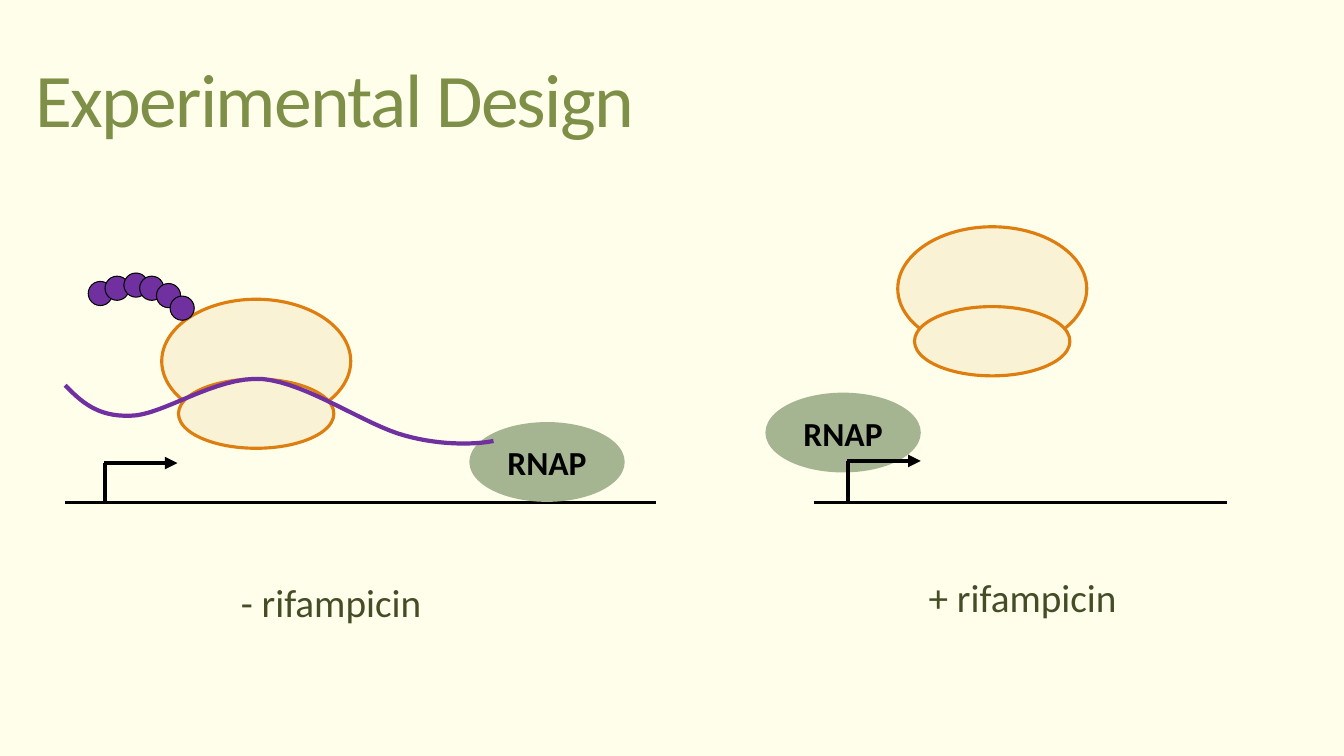
from lxml import etree
from pptx import Presentation
from pptx.dml.color import RGBColor
from pptx.enum.shapes import MSO_CONNECTOR, MSO_SHAPE
from pptx.enum.text import MSO_ANCHOR, MSO_AUTO_SIZE, PP_ALIGN
from pptx.oxml.ns import qn
from pptx.util import Emu, Pt

CREAM = RGBColor(0xFF, 0xFE, 0xEB)
OLIVE = RGBColor(0x7E, 0x8F, 0x47)
DARK_OLIVE = RGBColor(0x44, 0x4D, 0x26)
SAGE = RGBColor(0xA5, 0xB5, 0x92)
SAND = RGBColor(0xFA, 0xF2, 0xD4)
ORANGE = RGBColor(0xDD, 0x7E, 0x0E)
PURPLE = RGBColor(0x70, 0x30, 0xA0)
BLACK = RGBColor(0, 0, 0)
FONT = "Calibri"
CURVE_STEPS = 16

# Places within each panel
PEPTIDE = [(22, 8), (38, 3), (56, 0), (71, 3), (87, 10), (100, 22)]
MRNA_START = (0, 107)
MRNA_CURVES = [
    [(15, 122), (30, 137), (62, 136)],
    [(93, 136), (143, 98), (188, 101)],
    [(231, 105), (286, 145), (324, 155)],
    [(360, 165), (394, 163), (408, 160)],
]


def px(length):
    return Emu(round(length * 9525))


def style_text(paragraph, size, color, bold=False):
    font = paragraph.font
    font.name, font.size, font.bold = FONT, Pt(size), bold
    font.color.rgb = color


def add_ellipse(shapes, x, y, width, height, fill, outline=None, weight=0):
    ellipse = shapes.add_shape(MSO_SHAPE.OVAL, px(x), px(y), px(width), px(height))
    ellipse.shadow.inherit = False
    ellipse.fill.solid()
    ellipse.fill.fore_color.rgb = fill
    if outline is None:
        ellipse.line.fill.background()
    else:
        ellipse.line.color.rgb = outline
        ellipse.line.width = Pt(weight)
    return ellipse


def add_line(shapes, x1, y1, x2, y2, weight, arrow=False):
    line = shapes.add_connector(MSO_CONNECTOR.STRAIGHT, px(x1), px(y1), px(x2), px(y2))
    line.line.color.rgb = BLACK
    line.line.width = Pt(weight)
    if arrow:
        etree.SubElement(line.line._get_or_add_ln(), qn("a:tailEnd"), type="triangle")
    etree.SubElement(line._element.spPr, qn("a:effectLst"))


def add_ribosome(shapes, x, y):
    add_ellipse(shapes, x, y, 180, 118, SAND, ORANGE, 2.25)
    add_ellipse(shapes, x + 16, y + 76, 148, 66, SAND, ORANGE, 2.25)


def add_polymerase(shapes, x, y):
    polymerase = add_ellipse(shapes, x, y, 148, 76, SAGE)
    frame = polymerase.text_frame
    frame.word_wrap = False
    frame.vertical_anchor = MSO_ANCHOR.MIDDLE
    name = frame.paragraphs[0]
    name.text = "RNAP"
    name.alignment = PP_ALIGN.CENTER
    style_text(name, 24, BLACK, bold=True)


def add_promoter(shapes, x, y):
    add_line(shapes, x, y, x, y + 38, 3)
    add_line(shapes, x - 1, y, x + 69, y, 3, arrow=True)


def add_condition(shapes, x, y, wording):
    condition = shapes.add_textbox(px(x), px(y), px(370), px(55))
    frame = condition.text_frame
    frame.word_wrap = True
    frame.auto_size = MSO_AUTO_SIZE.SHAPE_TO_FIT_TEXT
    frame.text = wording
    style_text(frame.paragraphs[0], 28, DARK_OLIVE)


def curve_points(start, curves):
    """Follow joined cubic Bezier curves in short straight steps."""
    for curve in curves:
        controls = [start, *curve]
        for step in range(1, CURVE_STEPS + 1):
            t = step / CURVE_STEPS
            weights = ((1 - t) ** 3, 3 * t * (1 - t) ** 2, 3 * t * t * (1 - t), t ** 3)
            yield tuple(sum(w * point[axis] for w, point in zip(weights, controls))
                        for axis in (0, 1))
        start = curve[-1]


def add_mrna(shapes, x, y):
    start_x, start_y = MRNA_START
    outline = shapes.build_freeform(px(x + start_x), px(y + start_y))
    points = [(px(x + dx), px(y + dy)) for dx, dy in curve_points(MRNA_START, MRNA_CURVES)]
    outline.add_line_segments(points, close=False)
    mrna = outline.convert_to_shape()
    mrna.shadow.inherit = False
    mrna.fill.background()
    mrna.line.color.rgb = PURPLE
    mrna.line.width = Pt(3)


def add_title(slide, x, y, width, height):
    title = slide.shapes.title
    title.left, title.top, title.width, title.height = map(px, (x, y, width, height))
    frame = title.text_frame
    frame.text = "Experimental Design"
    frame.vertical_anchor = MSO_ANCHOR.MIDDLE
    heading = frame.paragraphs[0]
    heading.alignment = PP_ALIGN.LEFT
    heading.line_spacing = 0.85
    style_text(heading, 54, OLIVE)
    # Tighter letter spacing
    heading.runs[0]._r.get_or_add_rPr().set("spc", "-120")


def add_untreated_panel(slide, x, y):
    shapes = slide.shapes.add_group_shape().shapes
    add_ribosome(shapes, x + 92, y + 25)
    for dx, dy in PEPTIDE:
        add_ellipse(shapes, x + dx, y + dy, 23, 23, PURPLE, BLACK, 0.75)
    add_line(shapes, x, y + 219, x + 563, y + 219, 2.25)
    add_polymerase(shapes, x + 385, y + 142)
    add_mrna(shapes, x, y)
    add_promoter(shapes, x + 38, y + 181)
    add_condition(shapes, x + 158, y + 286, "- rifampicin")


def add_treated_panel(slide, x, y):
    shapes = slide.shapes.add_group_shape().shapes
    add_ribosome(shapes, x + 126, y)
    add_line(shapes, x + 46, y + 263, x + 440, y + 263, 2.25)
    # High enough for its label to clear the promoter arrow
    add_polymerase(shapes, x, y + 158)
    add_condition(shapes, x + 146, y + 325, "+ rifampicin")
    add_promoter(shapes, x + 79, y + 223)


def main():
    deck = Presentation()
    deck.slide_width, deck.slide_height = px(1280), px(720)
    slide = deck.slides.add_slide(deck.slide_layouts[5])
    slide.background.fill.solid()
    slide.background.fill.fore_color.rgb = CREAM
    add_title(slide, 24, 12, 1131, 174)
    add_untreated_panel(slide, 62, 260)
    add_treated_panel(slide, 729, 216)
    deck.save("out.pptx")


if __name__ == "__main__":
    main()
